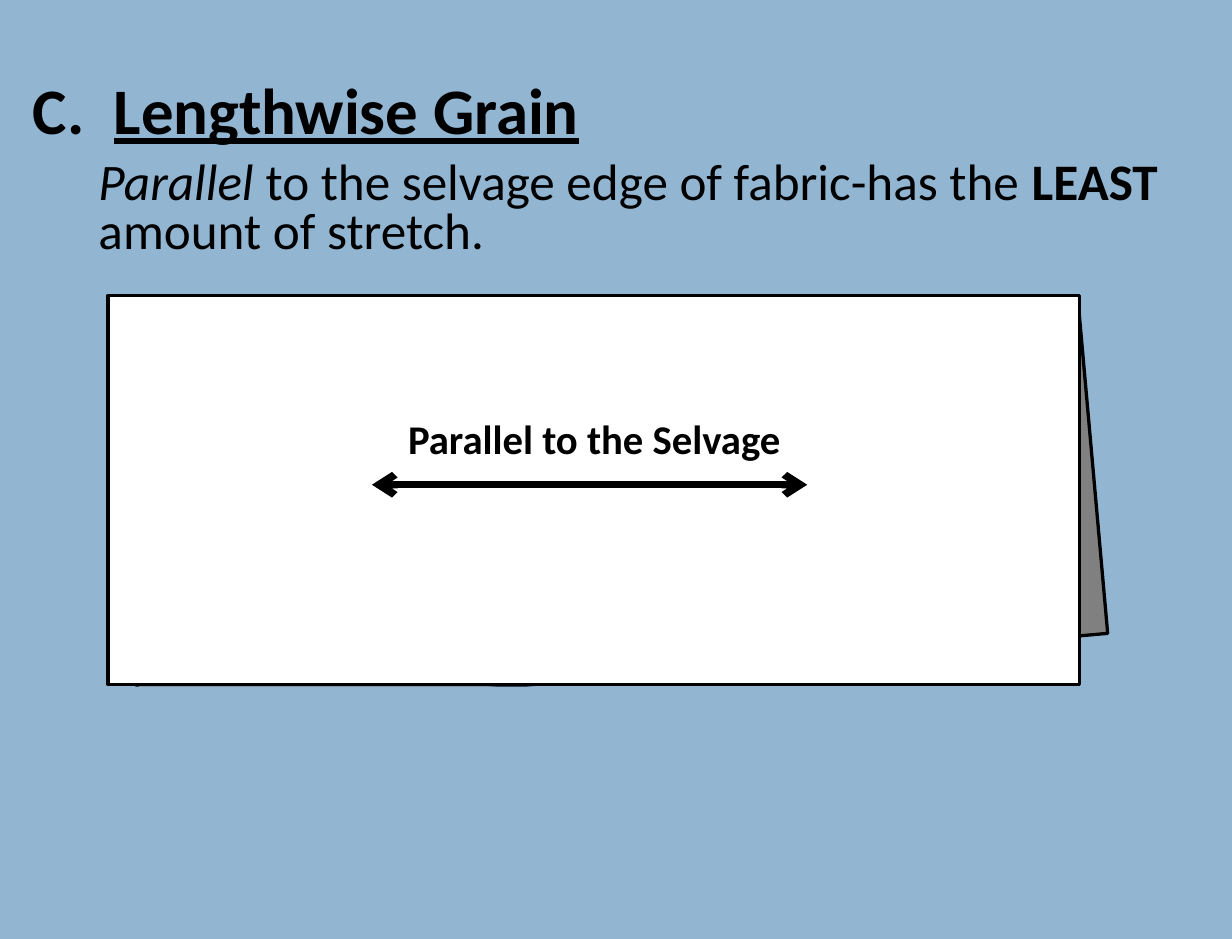
from pptx import Presentation
from pptx.dml.color import RGBColor
from pptx.enum.shapes import MSO_CONNECTOR, MSO_SHAPE
from pptx.enum.text import MSO_ANCHOR, MSO_AUTO_SIZE, PP_ALIGN
from pptx.oxml.ns import qn
from pptx.util import Emu, Pt
from lxml.etree import SubElement

EMU_PER_PX = 9144  # 100 px to the inch


def px(length):
    return Emu(length * EMU_PER_PX)


def color(hex_string):
    return RGBColor.from_string(hex_string)


class SlideBuilder:
    font_name = "Calibri"
    ink = "000000"
    background = "92B5D2"

    def __init__(self, presentation):
        self.slide = presentation.slides.add_slide(presentation.slide_layouts[5])
        fill = self.slide.background.fill
        fill.solid()
        fill.fore_color.rgb = color(self.background)

    def set_text(self, shape, runs, size, align=PP_ALIGN.LEFT, line_spacing=1.0, indent=0):
        """Fill a shape with one paragraph of (text, styles) runs; styles holds b, i, u."""
        frame = shape.text_frame
        frame.word_wrap = True
        frame.auto_size = MSO_AUTO_SIZE.NONE
        frame.vertical_anchor = MSO_ANCHOR.TOP
        frame.margin_left = frame.margin_right = px(11)
        frame.margin_top = frame.margin_bottom = px(5)
        paragraph = frame.paragraphs[0]
        paragraph.alignment = align
        paragraph.line_spacing = line_spacing
        paragraph.space_before = Pt(0)
        if indent:
            paragraph._p.get_or_add_pPr().set("marL", str(px(indent)))
        for text, styles in runs:
            run = paragraph.add_run()
            run.text = text
            run.font.name = self.font_name
            run.font.size = Pt(size)
            run.font.color.rgb = color(self.ink)
            run.font.bold = "b" in styles
            run.font.italic = "i" in styles
            run.font.underline = "u" in styles

    def title(self, left, top, width, height, runs, size, **layout):
        shape = self.slide.shapes.title
        shape.left, shape.top = px(left), px(top)
        shape.width, shape.height = px(width), px(height)
        self.set_text(shape, runs, size, **layout)

    def text(self, left, top, width, height, runs, size, **layout):
        shape = self.slide.shapes.add_textbox(px(left), px(top), px(width), px(height))
        self.set_text(shape, runs, size, **layout)

    def rectangle(self, left, top, width, height, fill, outlined=True, rotation=0):
        shape = self.slide.shapes.add_shape(
            MSO_SHAPE.RECTANGLE, px(left), px(top), px(width), px(height))
        shape.shadow.inherit = False
        shape.rotation = rotation
        shape.fill.solid()
        shape.fill.fore_color.rgb = color(fill)
        if outlined:
            shape.line.color.rgb = color(self.ink)
            shape.line.width = Pt(2)
        else:
            shape.line.fill.background()

    def double_arrow(self, start_x, start_y, end_x, end_y, width):
        connector = self.slide.shapes.add_connector(
            MSO_CONNECTOR.STRAIGHT, px(start_x), px(start_y), px(end_x), px(end_y))
        connector.line.color.rgb = color(self.ink)
        connector.line.width = Pt(width)
        properties = connector._element.spPr
        line = properties.find(qn("a:ln"))
        for end in ("a:headEnd", "a:tailEnd"):
            SubElement(line, qn(end), type="arrow")
        SubElement(properties, qn("a:effectLst"))


def main():
    presentation = Presentation()
    presentation.slide_width, presentation.slide_height = px(1050), px(800)
    builder = SlideBuilder(presentation)

    builder.title(17, 67, 1017, 65, [("C.  ", "b"), ("Lengthwise Grain", "bu")],
                  39.8, line_spacing=0.8)
    builder.text(17, 132, 1017, 105, [
        ("Parallel", "i"),
        (" to the selvage edge of fabric-has the ", ""),
        ("LEAST", "b"),
        (" amount of stretch.", ""),
    ], 31.4, line_spacing=0.8, indent=56)

    # Folded fabric: back layer, front layer, and a cover over the back's lower edge
    builder.rectangle(105, 290, 828, 287, "808080", rotation=354.9)
    builder.rectangle(92, 252, 828, 331, "FFFFFF")
    builder.rectangle(113, 585, 366, 57, builder.background, outlined=False)

    builder.double_arrow(317, 413, 688, 413, 4.5)
    builder.text(285, 348, 443, 52, [("Parallel to the Selvage", "b")],
                 25, align=PP_ALIGN.CENTER)

    presentation.save("out.pptx")


if __name__ == "__main__":
    main()
